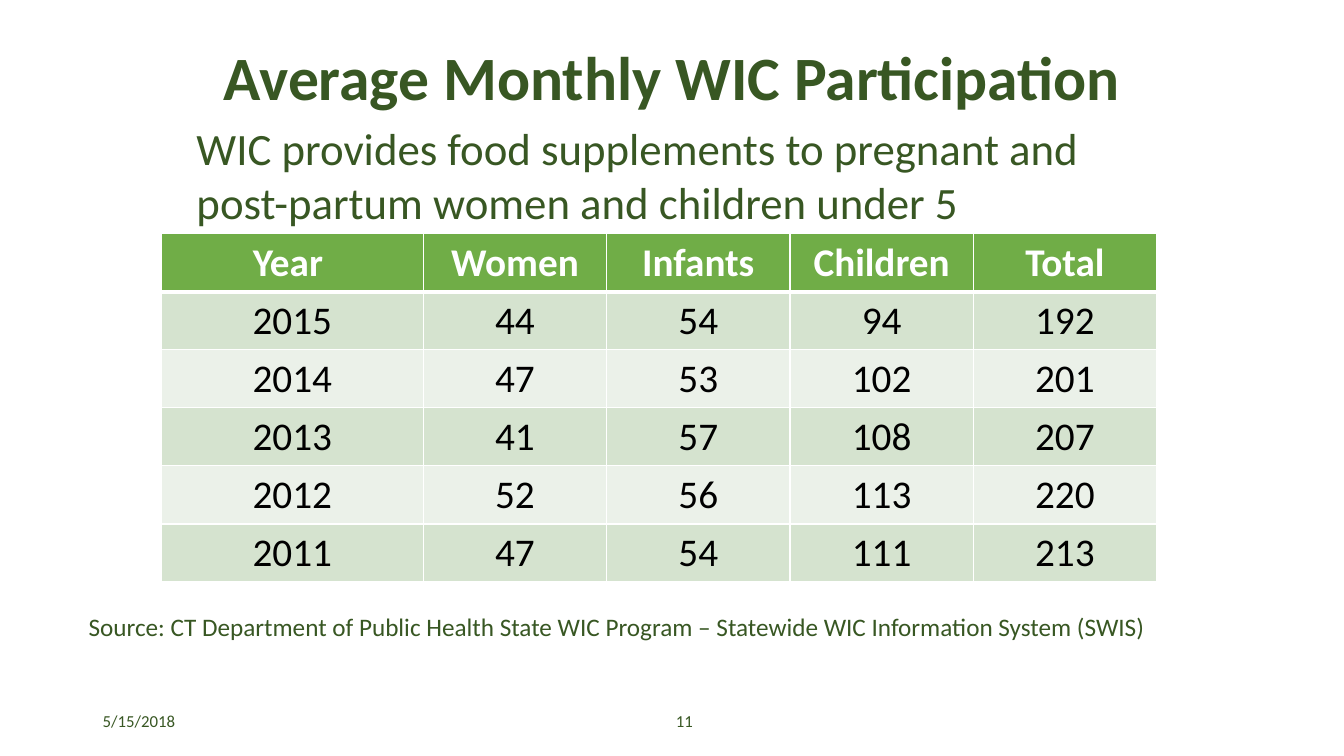
from lxml.etree import SubElement
from pptx import Presentation
from pptx.dml.color import RGBColor
from pptx.enum.text import MSO_ANCHOR as Anchor, PP_ALIGN as Align
from pptx.oxml.ns import qn
from pptx.util import Inches, Pt

DARK_GREEN, GREEN, WHITE = "385723", "70AD47", "FFFFFF"
BANDS = ["D5E3CF", "EBF1E9"]

deck = Presentation()
deck.slide_width, deck.slide_height = Inches(13.33), Inches(7.5)
slide = deck.slides.add_slide(deck.slide_layouts[5])
x_percent, y_percent = deck.slide_width / 100, deck.slide_height / 100


def write(frame, text, size, color=DARK_GREEN, bold=False, align=Align.LEFT,
          anchor=Anchor.TOP, spacing=1.0):
    frame.word_wrap = True
    frame.vertical_anchor = anchor
    line = frame.paragraphs[0]
    line.alignment, line.line_spacing = align, spacing
    run = line.add_run()
    run.text = text
    run.font.name, run.font.size, run.font.bold = "Calibri", Pt(size), bold
    run.font.color.rgb = RGBColor.from_string(color)


def shares(left, top, width, height):
    """Turn percentages of the slide's size into lengths."""
    return (round(left * x_percent), round(top * y_percent),
            round(width * x_percent), round(height * y_percent))


title = slide.shapes.title
title.left, title.top, title.width, title.height = shares(6.9, 0.93, 86.27, 19.33)
write(title.text_frame, "Average Monthly WIC Participation", 44, bold=True,
      align=Align.CENTER, anchor=Anchor.MIDDLE, spacing=0.9)

participation = [
    ["Year ", "Women", "Infants", "Children", "Total"],
    ["2015", "44", "54", "94", "192"],
    ["2014", "47", "53", "102", "201"],
    ["2013", "41", "57", "108", "207"],
    ["2012", "52", "56", "113", "220"],
    ["2011", "47", "54", "111", "213"],
]
table = slide.shapes.add_table(len(participation), len(participation[0]),
                               *shares(12, 30.93, 74.06, 46)).table
for c, column in enumerate(table.columns):
    column.width = round((13.64 if c else 19.5) * x_percent)

for r, values in enumerate(participation):
    header = r == 0
    for c, value in enumerate(values):
        cell = table.cell(r, c)
        write(cell.text_frame, value, 28, color=WHITE if header else "000000",
              bold=header, align=Align.CENTER)
        thick_side = {0: "lnB", 1: "lnT"}.get(r)
        for side in ("lnL", "lnR", "lnT", "lnB"):
            border = SubElement(cell._tc.get_or_add_tcPr(), qn("a:" + side),
                                w=str(Pt(3 if side == thick_side else 1)))
            SubElement(SubElement(border, qn("a:solidFill")), qn("a:srgbClr"), val=WHITE)
        cell.fill.solid()
        cell.fill.fore_color.rgb = RGBColor.from_string(GREEN if header else BANDS[(r - 1) % 2])

notes = [
    ("WIC provides food supplements to pregnant and post-partum women and children under 5",
     (13.88, 15.33, 74.04, 19.73), dict(size=32)),
    ("Source: CT Department of Public Health State WIC Program – "
     "Statewide WIC Information System (SWIS)",
     (5.85, 80.67, 86.27, 8.27), dict(size=18, spacing=0.9)),
    ("5/15/2018", (6.9, 92.67, 22.5, 5.33), dict(size=12, anchor=Anchor.MIDDLE)),
    ("11", (47.71, 92.67, 4.58, 5.33),
     dict(size=12, anchor=Anchor.MIDDLE, align=Align.RIGHT)),
]
for text, place, style in notes:
    write(slide.shapes.add_textbox(*shares(*place)).text_frame, text, **style)

deck.save("out.pptx")
